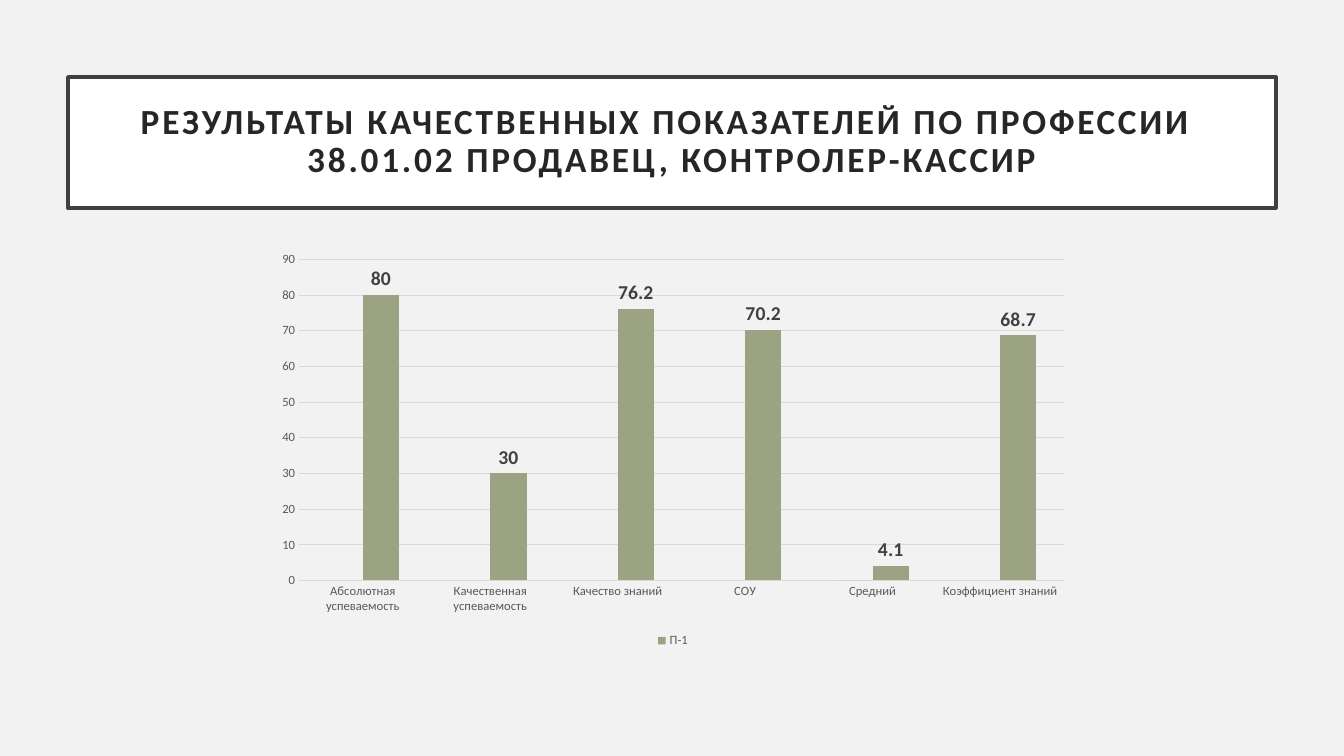
from copy import deepcopy

from lxml import etree
from pptx import Presentation
from pptx.chart.data import CategoryChartData
from pptx.dml.color import RGBColor
from pptx.enum.chart import XL_CHART_TYPE, XL_LABEL_POSITION, XL_LEGEND_POSITION, XL_TICK_MARK
from pptx.enum.text import MSO_ANCHOR, MSO_AUTO_SIZE, PP_ALIGN
from pptx.oxml.ns import qn
from pptx.util import Pt

COLUMNS = XL_CHART_TYPE.COLUMN_CLUSTERED
OUTSIDE_END = XL_LABEL_POSITION.OUTSIDE_END
LEGEND_BOTTOM = XL_LEGEND_POSITION.BOTTOM
NO_TICKS = XL_TICK_MARK.NONE
MIDDLE = MSO_ANCHOR.MIDDLE
NO_AUTOFIT = MSO_AUTO_SIZE.NONE
CENTER = PP_ALIGN.CENTER

BACKGROUND = RGBColor(0xF2, 0xF2, 0xF2)
WHITE = RGBColor(0xFF, 0xFF, 0xFF)
FRAME = RGBColor(0x40, 0x40, 0x40)
HEADING = RGBColor(0x26, 0x26, 0x26)
AXIS_TEXT = RGBColor(0x59, 0x59, 0x59)
GRID = RGBColor(0xD9, 0xD9, 0xD9)
BLUE_GREY = RGBColor(0x9B, 0xAF, 0xB5)
OLIVE = RGBColor(0x9C, 0xA3, 0x83)
FONT = "Calibri"
PX = 914400 / 100.8


def px(*lengths):
    """Turn pixel lengths into a list of EMU."""
    return [round(length * PX) for length in lengths]


def style(font, size, color, bold=False):
    font.name = FONT
    font.size = Pt(size)
    font.bold = bold
    font.color.rgb = color


presentation = Presentation()
presentation.slide_width, presentation.slide_height = px(1344, 756)
slide = presentation.slides.add_slide(presentation.slide_layouts[5])
slide.background.fill.solid()
slide.background.fill.fore_color.rgb = BACKGROUND

# Framed heading
heading = slide.shapes.title
heading.left, heading.top, heading.width, heading.height = px(68, 77, 1208, 131)
heading.fill.solid()
heading.fill.fore_color.rgb = WHITE
heading.line.color.rgb = FRAME
heading.line.width = Pt(2.5)

frame = heading.text_frame
frame.text = ("РЕЗУЛЬТАТЫ КАЧЕСТВЕННЫХ ПОКАЗАТЕЛЕЙ ПО ПРОФЕССИИ \v"
              "38.01.02 ПРОДАВЕЦ, КОНТРОЛЕР-КАССИР")
frame.word_wrap = True
frame.auto_size = NO_AUTOFIT
frame.vertical_anchor = MIDDLE
frame.margin_left, frame.margin_top, frame.margin_right, frame.margin_bottom = px(20, 20, 20, 20)
paragraph = frame.paragraphs[0]
paragraph.alignment = CENTER
paragraph.line_spacing = 0.9
for run in paragraph.runs:
    style(run.font, 25.2, HEADING, bold=True)
    run.font._element.set("spc", "200")
line_break = paragraph._p.find(qn("a:br"))
line_break.insert(0, deepcopy(paragraph.runs[0].font._element))

# Column chart: the empty first series keeps its place beside each column
results = CategoryChartData()
results.categories = ["Абсолютная успеваемость", "Качественная успеваемость",
                      "Качество знаний", "СОУ", "Средний", "Коэффициент знаний"]
results.add_series("Series 1", [None, None, None, None, 0, None])
results.add_series("П-1", [80, 30, 76.2, 70.2, 4.1, 68.7])
chart = slide.shapes.add_chart(COLUMNS, *px(266, 244, 814, 408), results).chart
chart.has_title = False
chart.font.name = FONT
chart.font.size = Pt(10)

plot = chart.plots[0]
plot.gap_width = 150
plot.overlap = 0
plot.vary_by_categories = False
for series, color in zip(plot.series, (BLUE_GREY, OLIVE)):
    series.format.fill.solid()
    series.format.fill.fore_color.rgb = color
    series.invert_if_negative = False

labels = plot.series[1].data_labels
labels.show_value = True
labels.position = OUTSIDE_END
style(labels.font, 14, FRAME, bold=True)

for axis in (chart.category_axis, chart.value_axis):
    axis.major_tick_mark = NO_TICKS
    axis.minor_tick_mark = NO_TICKS
    axis.format.line.fill.background()
    style(axis.tick_labels.font, 9, AXIS_TEXT)
scale = chart.value_axis
scale.minimum_scale, scale.maximum_scale, scale.major_unit = 0, 90, 10
scale.major_gridlines.format.line.color.rgb = GRID
scale.major_gridlines.format.line.width = Pt(0.75)

chart.has_legend = True
legend = chart.legend
legend.position = LEGEND_BOTTOM
legend.include_in_layout = False
style(legend.font, 9, AXIS_TEXT)
hidden_entry = etree.Element(qn("c:legendEntry"))
etree.SubElement(hidden_entry, qn("c:idx")).set("val", "0")
etree.SubElement(hidden_entry, qn("c:delete")).set("val", "1")
legend._element.find(qn("c:legendPos")).addnext(hidden_entry)

presentation.save("out.pptx")
